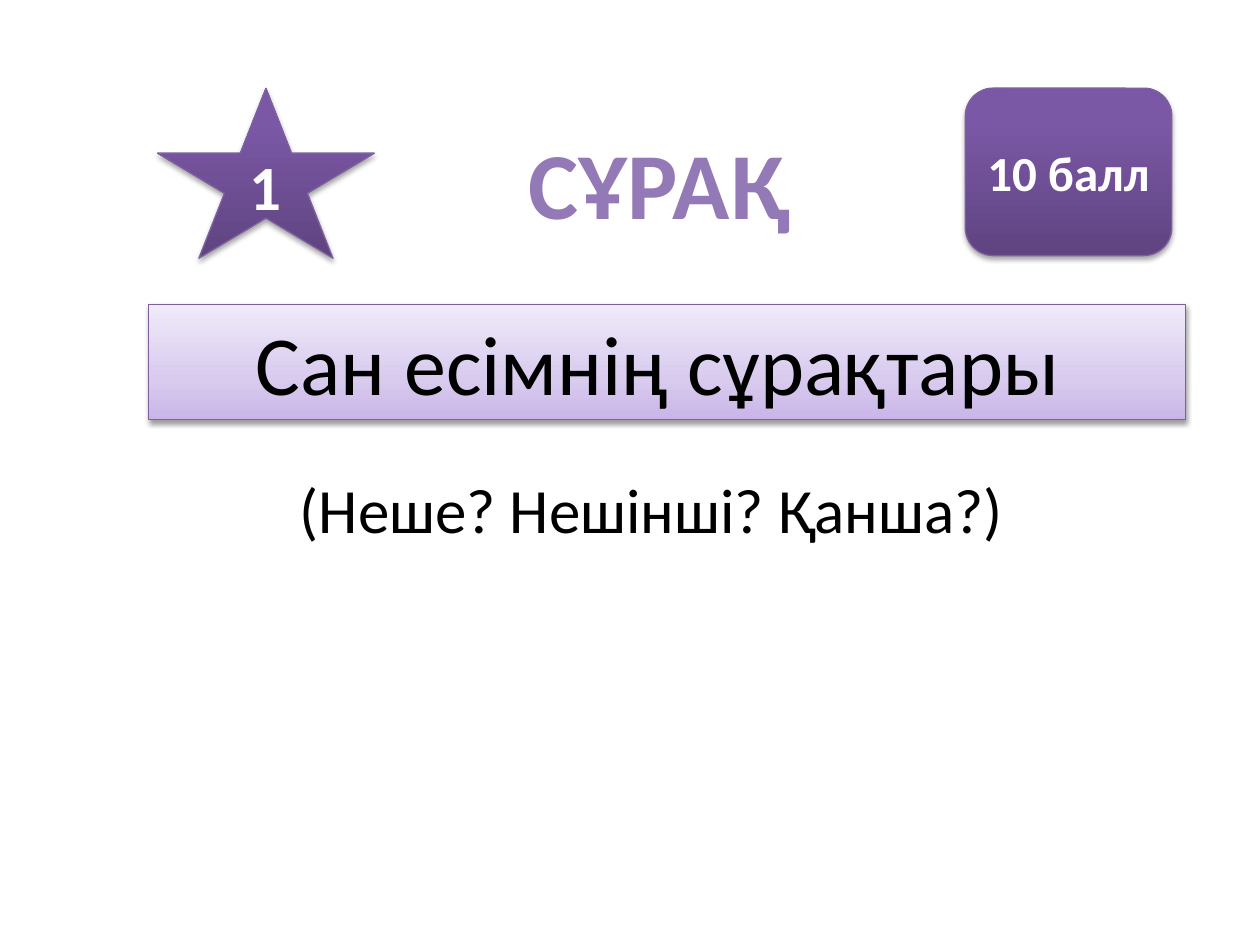
from dataclasses import dataclass

from lxml.etree import SubElement
from pptx import Presentation
from pptx.dml.color import RGBColor
from pptx.enum.shapes import MSO_SHAPE as Preset
from pptx.enum.text import MSO_ANCHOR as Anchor, MSO_AUTO_SIZE as AutoSize, PP_ALIGN as Align
from pptx.oxml.ns import qn
from pptx.util import Pt


@dataclass(frozen=True)
class Theme:
    font: str = "Calibri"
    black: str = "000000"
    white: str = "FFFFFF"
    outline: str = "7D60A0"
    dark_stops: tuple = ((0, "5F4480"), (80, "7B58A6"), (100, "7C57A8"))
    light_stops: tuple = ((0, "C9B5E8"), (35, "D8CBEE"), (100, "F0EAF9"))
    heading_stops: tuple = ((0, "B099D2"), (40, "9379B5"), (68, "9379B5"), (100, "B099D2"))
    heading_size: int = 54
    question_size: int = 48
    body_size: int = 36
    points_size: int = 28


THEME = Theme()


def set_gradient(fill, element, stops, angle):
    fill.gradient()
    fill.gradient_angle = angle
    stop_list = next(element.iter(qn("a:gsLst")))
    for stop in list(stop_list):
        stop_list.remove(stop)
    for position, color in stops:
        stop = SubElement(stop_list, qn("a:gs"), pos=str(position * 1000))
        SubElement(stop, qn("a:srgbClr"), val=color)


def add_shadow(shape, opacity, distance):
    shape.shadow.inherit = False
    effects = shape._element.spPr.find(qn("a:effectLst"))
    shadow = SubElement(effects, qn("a:outerShdw"), blurRad=str(Pt(3.1)),
                        dist=str(Pt(distance)), dir="5400000", rotWithShape="0")
    color = SubElement(shadow, qn("a:srgbClr"), val=THEME.black)
    SubElement(color, qn("a:alpha"), val=str(opacity * 1000))


def set_text(shape, text, size, color, bold=False, anchor=Anchor.MIDDLE):
    """Write one centred line and return its run."""
    frame = shape.text_frame
    frame.text = text
    frame.word_wrap = True
    frame.vertical_anchor = anchor
    paragraph = frame.paragraphs[0]
    paragraph.alignment = Align.CENTER
    run = paragraph.runs[0]
    run.font.name = THEME.font
    run.font.size = Pt(size)
    run.font.bold = bold
    run.font.color.rgb = RGBColor.from_string(color)
    return run


def add_panel(slide, preset, box, stops, opacity, distance):
    shape = slide.shapes.add_shape(preset, *map(Pt, box))
    set_gradient(shape.fill, shape._element, stops, 90)
    shape.line.color.rgb = RGBColor.from_string(THEME.outline)
    shape.line.width = Pt(0.75)
    add_shadow(shape, opacity, distance)
    return shape


def add_badge(slide, preset, box, text, size):
    badge = add_panel(slide, preset, box, THEME.dark_stops, 35, 1.8)
    set_text(badge, text, size, THEME.white, bold=True)


def add_header(slide, left, top, width, height):
    # Question number, heading and points
    points_width = 118
    add_badge(slide, Preset.ROUNDED_RECTANGLE,
              (left + width - points_width, top, points_width, height - 1.5),
              "10 балл", THEME.points_size)
    add_badge(slide, Preset.STAR_5_POINT, (left, top, 124, height), "1", THEME.body_size)

    heading = slide.shapes.add_textbox(Pt(left + 204.5), Pt(top + 17.5), Pt(164), Pt(72.7))
    run = set_text(heading, "СҰРАҚ", THEME.heading_size, THEME.outline,
                   bold=True, anchor=Anchor.TOP)
    heading.text_frame.word_wrap = False
    heading.text_frame.auto_size = AutoSize.SHAPE_TO_FIT_TEXT
    set_gradient(run.font.fill, run._r, THEME.heading_stops, 270)


def add_question(slide, left, top, width, height):
    # Question banner, its text set slightly left of centre
    banner = add_panel(slide, Preset.RECTANGLE, (left, top, width, height),
                       THEME.light_stops, 38, 1.6)
    set_text(banner, "Сан есімнің сұрақтары", THEME.question_size, THEME.black,
             anchor=Anchor.TOP)
    banner.text_frame.margin_right = Pt(18)


def add_answer(slide, left, top, width, height):
    # Answer below the banner
    answer = slide.shapes.add_textbox(Pt(left), Pt(top), Pt(width), Pt(height))
    set_text(answer, "(Неше? Нешінші? Қанша?)", THEME.body_size, THEME.black,
             anchor=Anchor.TOP)
    answer.text_frame.margin_top = Pt(21)


def main():
    presentation = Presentation()
    presentation.slide_width, presentation.slide_height = Pt(720), Pt(540)
    slide = presentation.slides.add_slide(presentation.slide_layouts[6])
    add_question(slide, 85, 174.2, 592.5, 65.5)
    add_answer(slide, 127.5, 247.7, 489.5, 168.5)
    add_header(slide, 90, 50.4, 579.6, 97.2)
    presentation.save("out.pptx")


if __name__ == "__main__":
    main()
